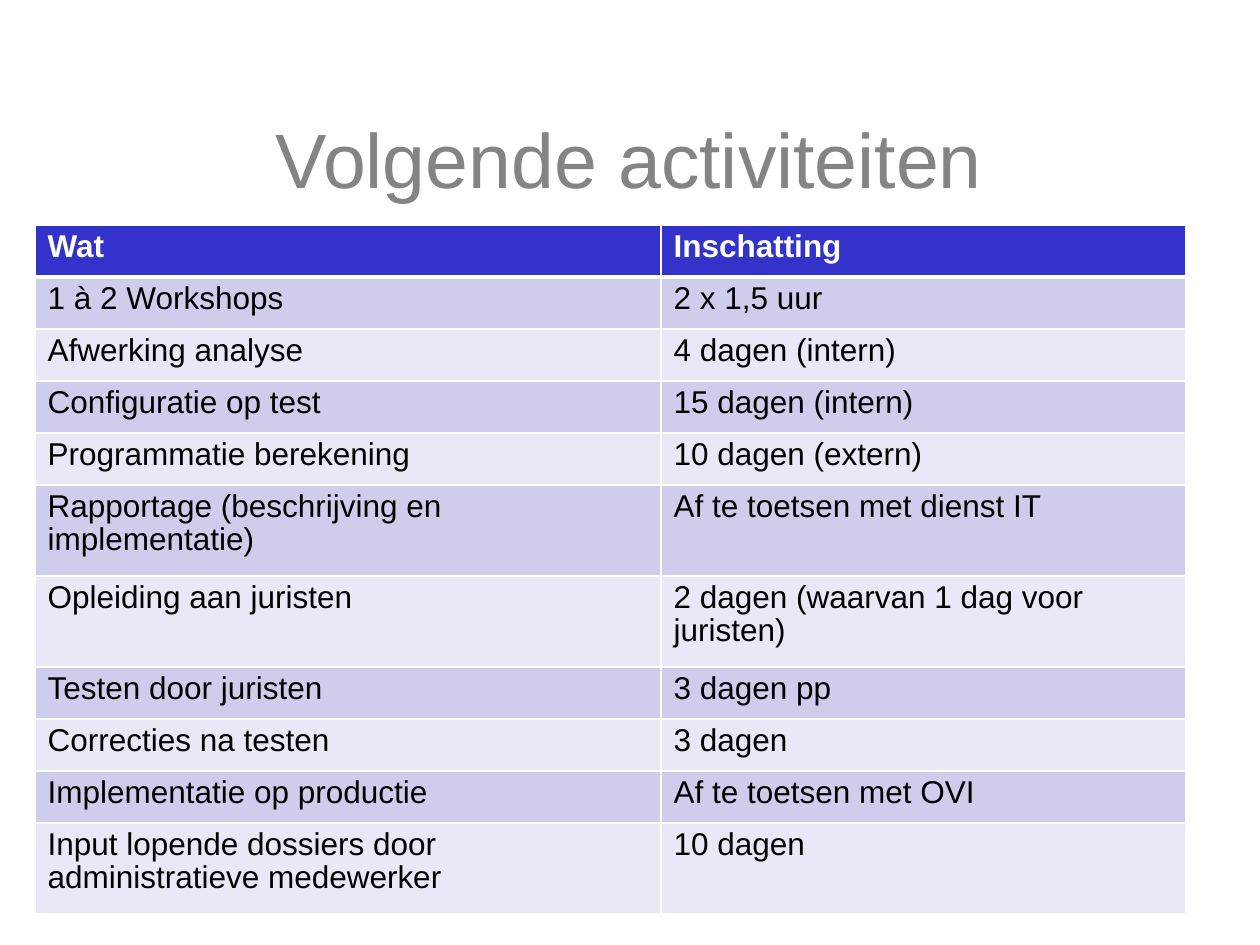
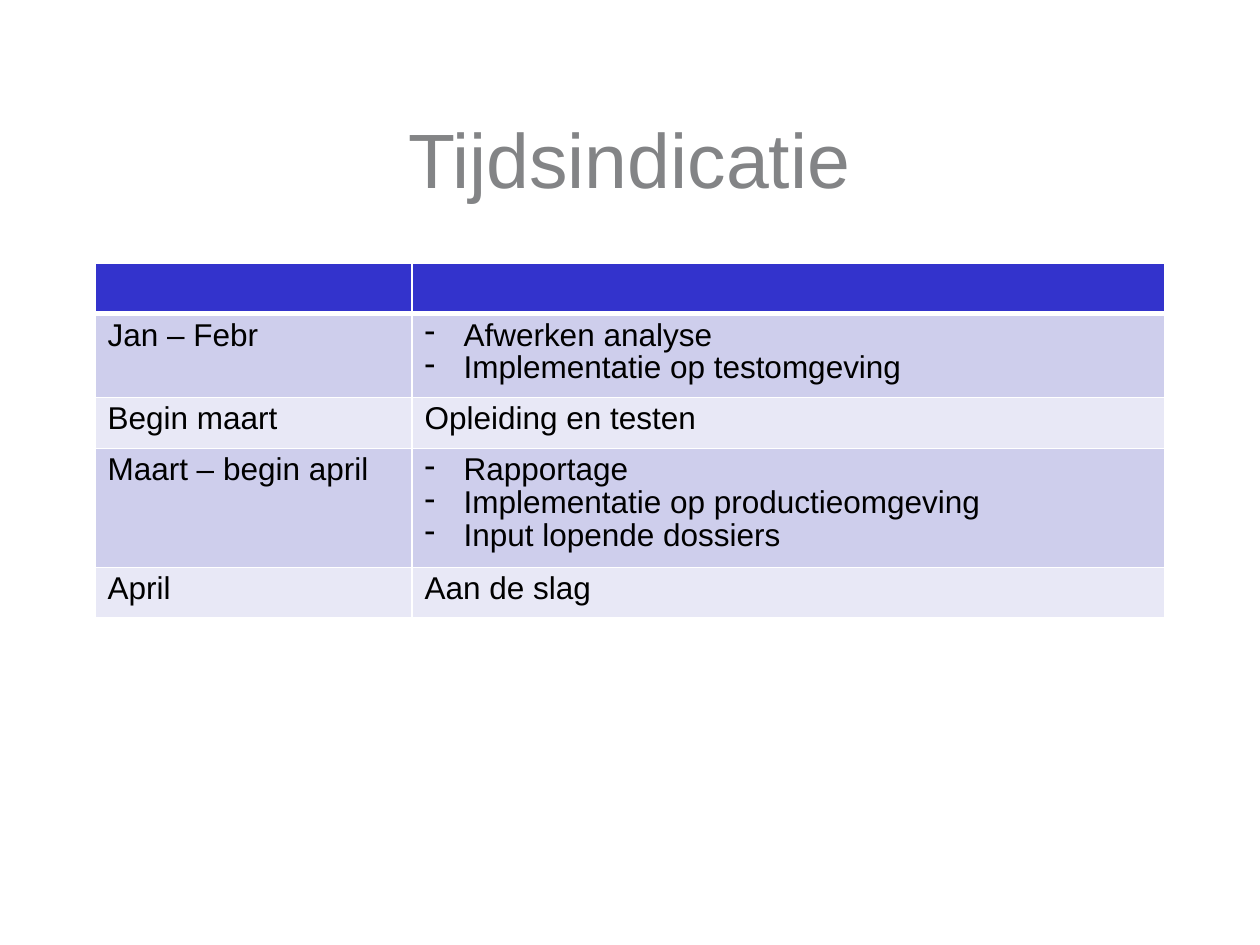
"""Build the two planning slides: next activities and time indication."""
from typing import NamedTuple

import lxml.etree
import pptx
import pptx.dml.color
import pptx.enum.text
import pptx.oxml.ns
import pptx.util

RGB = pptx.dml.color.RGBColor
WHITE = RGB(0xFF, 0xFF, 0xFF)
BLACK = RGB(0x00, 0x00, 0x00)
GREY = RGB(0x83, 0x84, 0x86)
BLUE = RGB(0x33, 0x33, 0xCC)
BANDS = (RGB(0xE8, 0xE8, 0xF6), RGB(0xCE, 0xCE, 0xEC))
FONT = "Arial"
LEADING = 0.93
INDENT = 39


class Plan(NamedTuple):
    title: str
    left: int
    top: int
    widths: tuple[int, ...]
    heights: tuple[int, ...]
    rows: tuple[tuple[str, str], ...]


PLANS = (
    Plan(
        "Volgende activiteiten", 35, 225, (626, 525),
        (52, 52, 52, 52, 52, 91, 91, 52, 52, 52, 91),
        (
            ("Wat", "Inschatting"),
            ("1 à 2 Workshops", "2 x 1,5 uur"),
            ("Afwerking analyse", "4 dagen (intern)"),
            ("Configuratie op test", "15 dagen (intern)"),
            ("Programmatie berekening", "10 dagen (extern)"),
            ("Rapportage (beschrijving en implementatie)", "Af te toetsen met dienst IT"),
            ("Opleiding aan juristen", "2 dagen (waarvan 1 dag voor juristen)"),
            ("Testen door juristen", "3 dagen pp"),
            ("Correcties na testen", "3 dagen"),
            ("Implementatie op productie", "Af te toetsen met OVI"),
            ("Input lopende dossiers door administratieve medewerker", "10 dagen"),
        ),
    ),
    Plan(
        "Tijdsindicatie", 95, 263, (317, 753), (50, 84, 51, 119, 50),
        (
            ("", ""),
            ("Jan – Febr", "Afwerken analyse\nImplementatie op testomgeving"),
            ("Begin maart", "Opleiding en testen"),
            ("Maart – begin april",
             "Rapportage\nImplementatie op productieomgeving\nInput lopende dossiers"),
            ("April", "Aan de slag"),
        ),
    ),
)


def px(n: int) -> pptx.util.Emu:
    return pptx.util.Emu(round(n * 914400 / 126))


def style(para, size: int, color: RGB, bold: bool = False) -> None:
    para.line_spacing = LEADING
    for font in (para.font, *(run.font for run in para.runs)):
        font.name = FONT
        font.size = pptx.util.Pt(size)
        font.bold = bold
        font.color.rgb = color


def add_dash(para) -> None:
    props = para._p.get_or_add_pPr()
    props.set("marL", str(px(INDENT)))
    props.set("indent", str(-px(INDENT)))
    mark = lxml.etree.SubElement(props, pptx.oxml.ns.qn("a:buChar"))
    mark.set("char", "-")


def add_edges(cell, row: int) -> None:
    qn = pptx.oxml.ns.qn
    props = cell._tc.get_or_add_tcPr()
    thick = {"T": 3 if row == 1 else 1, "B": 3 if row == 0 else 1}
    for spot, side in enumerate("LRTB"):
        line = lxml.etree.Element(qn(f"a:ln{side}"))
        line.set("w", str(pptx.util.Pt(thick.get(side, 1))))
        fill = lxml.etree.SubElement(line, qn("a:solidFill"))
        lxml.etree.SubElement(fill, qn("a:srgbClr")).set("val", str(WHITE))
        props.insert(spot, line)


def fill_cell(cell, text: str, row: int) -> None:
    head = row == 0
    cell.text_frame.text = text
    cell.fill.solid()
    cell.fill.fore_color.rgb = BLUE if head else BANDS[row % 2]
    add_edges(cell, row)
    for para in cell.text_frame.paragraphs:
        if "\n" in text:
            add_dash(para)
        style(para, 18, WHITE if head else BLACK, head)


def add_title(slide, text: str) -> None:
    frame = slide.shapes.add_textbox(px(94), px(64), px(1071), px(198)).text_frame
    frame.word_wrap = True
    frame.vertical_anchor = pptx.enum.text.MSO_ANCHOR.MIDDLE
    frame.text = text
    para = frame.paragraphs[0]
    para.alignment = pptx.enum.text.PP_ALIGN.CENTER
    style(para, 44, GREY)


def add_grid(slide, plan: Plan) -> None:
    table = slide.shapes.add_table(
        len(plan.rows), len(plan.widths), px(plan.left), px(plan.top),
        px(sum(plan.widths)), px(sum(plan.heights))).table
    for col, width in zip(table.columns, plan.widths):
        col.width = px(width)
    for r, (height, texts) in enumerate(zip(plan.heights, plan.rows)):
        table.rows[r].height = px(height)
        for c, text in enumerate(texts):
            fill_cell(table.cell(r, c), text, r)


def main() -> None:
    deck = pptx.Presentation()
    deck.slide_width, deck.slide_height = px(1260), px(945)
    for plan in PLANS:
        slide = deck.slides.add_slide(deck.slide_layouts[6])
        add_title(slide, plan.title)
        add_grid(slide, plan)
    deck.save("out.pptx")


if __name__ == "__main__":
    main()
